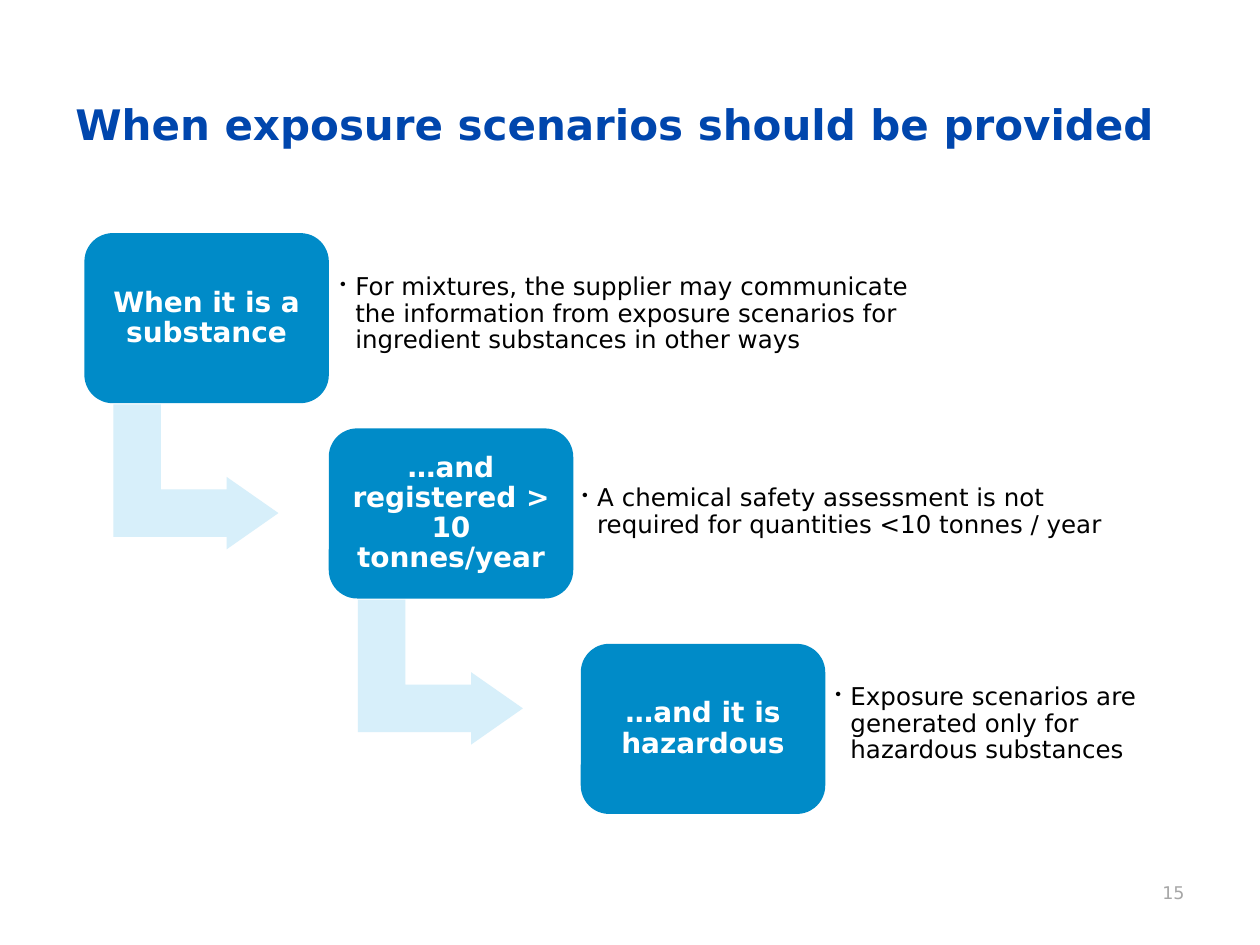
"""Build a slide with three stepped conditions for providing exposure scenarios."""
from dataclasses import dataclass

from lxml import etree
from pptx import Presentation
from pptx.dml.color import RGBColor
from pptx.enum.shapes import MSO_SHAPE
from pptx.enum.text import MSO_ANCHOR, PP_ALIGN
from pptx.oxml.ns import qn
from pptx.util import Inches, Pt

ROUNDED = MSO_SHAPE.ROUNDED_RECTANGLE
BENT_ARROW = MSO_SHAPE.BENT_UP_ARROW
TOP, MIDDLE = MSO_ANCHOR.TOP, MSO_ANCHOR.MIDDLE
LEFT, CENTER, RIGHT = PP_ALIGN.LEFT, PP_ALIGN.CENTER, PP_ALIGN.RIGHT


@dataclass(frozen=True)
class Style:
    size: int
    color: str
    bold: bool = False
    align: PP_ALIGN = LEFT
    anchor: MSO_ANCHOR = MIDDLE
    spacing: float = 1.0


@dataclass(frozen=True)
class Theme:
    font: str = "DejaVu Sans"
    box: str = "008BC8"
    arrow: str = "D7EFFA"
    title: Style = Style(24, "0046AD", bold=True)
    step: Style = Style(16, "FFFFFF", bold=True, align=CENTER, spacing=0.9)
    note: Style = Style(14, "000000", spacing=0.9)
    number: Style = Style(10, "A6A6A6", align=RIGHT, anchor=TOP)


@dataclass(frozen=True)
class Area:
    left: float
    top: float
    width: float
    height: float

    def emu(self):
        return [Inches(v) for v in (self.left, self.top, self.width, self.height)]


@dataclass(frozen=True)
class Step:
    left: float
    top: float
    label: str
    note: str
    note_area: Area


THEME = Theme()
BOX_W, BOX_H = 1.94, 1.35
ARROW_W, ARROW_H = 1.15, 1.31
ARROW_DX, ARROW_DY = 0.31, 1.28
ARROW_ADJUSTMENTS = (0.328, 0.25, 0.358)
BULLET_INDENT = 0.12

STEPS = (
    Step(0.67, 1.85, "When it is a substance",
         "For mixtures, the supplier may communicate the information from "
         "exposure scenarios for ingredient substances in other ways",
         Area(2.64, 1.95, 4.67, 1.09)),
    Step(2.61, 3.4, "…and registered > 10 tonnes/year",
         "A chemical safety assessment is not required for quantities "
         "<10 tonnes / year",
         Area(4.56, 3.52, 4.61, 1.09)),
    Step(4.61, 5.11, "…and it is hazardous",
         "Exposure scenarios are generated only for hazardous substances",
         Area(6.57, 5.07, 2.63, 1.36)),
)


def write(s, text: str, style: Style, inset_x: float = 0.1, inset_y: float = 0.05):
    tf = s.text_frame
    tf.word_wrap = True
    tf.vertical_anchor = style.anchor
    tf.margin_left = tf.margin_right = Inches(inset_x)
    tf.margin_top = tf.margin_bottom = Inches(inset_y)
    p = tf.paragraphs[0]
    p.text = text
    p.alignment = style.align
    p.line_spacing = style.spacing
    p.font.name = THEME.font
    p.font.size = Pt(style.size)
    p.font.bold = style.bold
    p.font.color.rgb = RGBColor.from_string(style.color)
    return p


def add_text(slide, area: Area, text: str, style: Style, inset_x=0.1, inset_y=0.05):
    return write(slide.shapes.add_textbox(*area.emu()), text, style, inset_x, inset_y)


def add_filled(slide, kind: MSO_SHAPE, area: Area, color: str):
    s = slide.shapes.add_shape(kind, *area.emu())
    s.shadow.inherit = False
    s.fill.solid()
    s.fill.fore_color.rgb = RGBColor.from_string(color)
    s.line.fill.background()
    return s


def add_bullet(p) -> None:
    pPr = p._p.get_or_add_pPr()
    pPr.set("marL", str(Inches(BULLET_INDENT)))
    pPr.set("indent", str(-Inches(BULLET_INDENT)))
    size = etree.Element(qn("a:buSzPct"), val="70000")
    char = etree.Element(qn("a:buChar"), char="•")
    pPr.find(qn("a:lnSpc")).addnext(size)
    size.addnext(char)


def add_arrow(slide, step: Step) -> None:
    area = Area(step.left + ARROW_DX, step.top + ARROW_DY, ARROW_W, ARROW_H)
    s = add_filled(slide, BENT_ARROW, area, THEME.arrow)
    s.rotation = 90
    for i, value in enumerate(ARROW_ADJUSTMENTS):
        s.adjustments[i] = value


def add_step(slide, step: Step) -> None:
    s = add_filled(slide, ROUNDED, Area(step.left, step.top, BOX_W, BOX_H), THEME.box)
    write(s, step.label, THEME.step, 0.07, 0.07)
    add_bullet(add_text(slide, step.note_area, step.note, THEME.note, 0.06, 0.06))


def main() -> None:
    prs = Presentation()
    prs.slide_width, prs.slide_height = Inches(10), Inches(7.5)
    slide = prs.slides.add_slide(prs.slide_layouts[6])
    add_text(slide, Area(0.5, 0.36, 9, 1.25),
             "When exposure scenarios should be provided", THEME.title)
    for step in STEPS:
        if step is not STEPS[-1]:
            add_arrow(slide, step)
        add_step(slide, step)
    add_text(slide, Area(7.17, 6.95, 2.33, 0.4), "15", THEME.number)
    prs.save("out.pptx")


if __name__ == "__main__":
    main()
